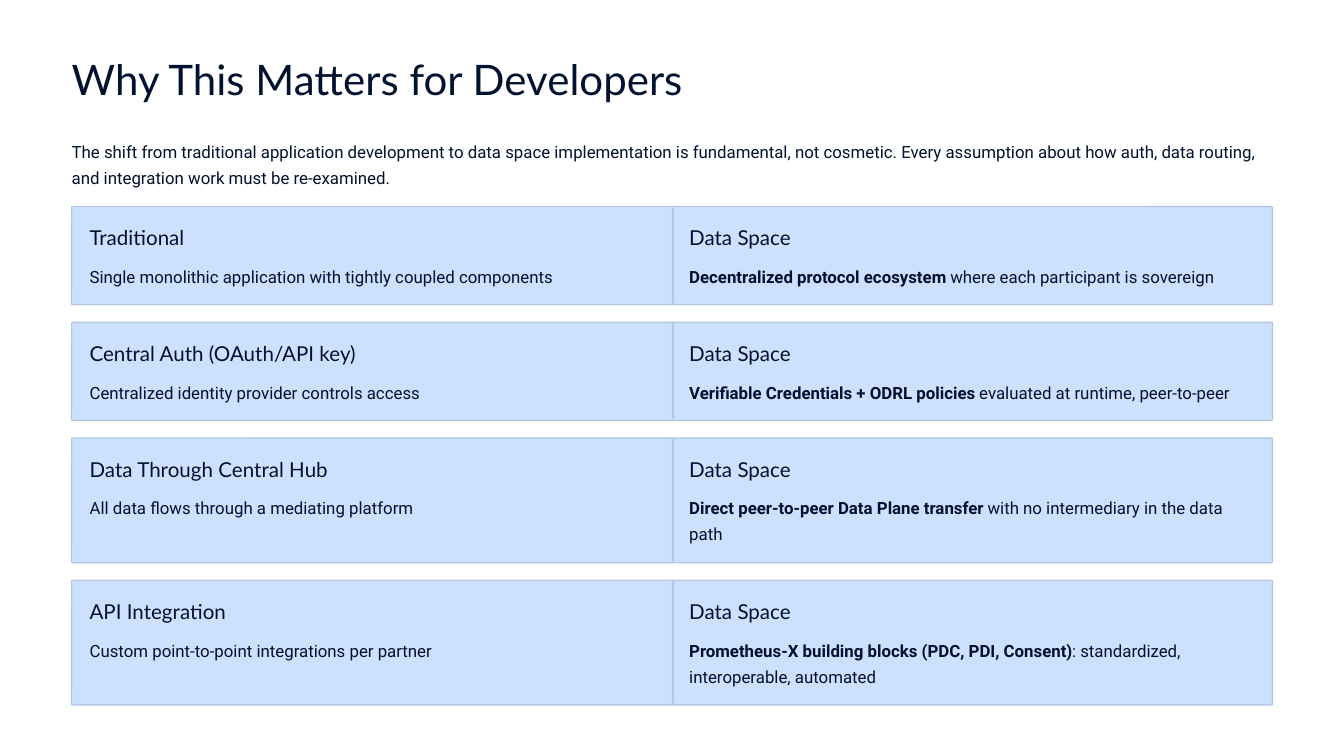
from dataclasses import dataclass

from pptx import Presentation
from pptx import util as u
from pptx.dml.color import RGBColor
from pptx.enum import shapes, text


@dataclass(frozen=True)
class Theme:
    paper: str = "FFFFFF"
    ink: str = "01122E"
    panel: str = "CDE0FE"
    edge: str = "B3C6E4"
    heading_font: str = "Lato"
    body_font: str = "Roboto"
    title_size: float = 22.5
    heading_size: float = 11
    body_size: float = 9
    heading_spacing: float = 1.04
    body_spacing: float = 1.29


THEME = Theme()
HEADING = dict(font=THEME.heading_font, size=THEME.heading_size,
               spacing=THEME.heading_spacing)
TITLE = {**HEADING, "size": THEME.title_size}
BODY = dict(font=THEME.body_font, size=THEME.body_size,
            spacing=THEME.body_spacing)


def write(box, words, *, font, size, spacing, lead=""):
    """Fill a box with one paragraph; the lead, if any, is bold."""
    frame = box.text_frame
    frame.word_wrap = True
    frame.auto_size = text.MSO_AUTO_SIZE.NONE
    frame.vertical_anchor = text.MSO_ANCHOR.TOP
    frame.margin_left = frame.margin_right = 0
    frame.margin_top = frame.margin_bottom = 0
    para = frame.paragraphs[0]
    para.alignment = text.PP_ALIGN.LEFT
    para.line_spacing = spacing
    para.space_before = u.Pt(0)
    for part, bold in ((lead, True), (words, False)):
        if part:
            span = para.add_run()
            span.text = part
            span.font.name = font
            span.font.size = u.Pt(size)
            span.font.bold = bold
            span.font.color.rgb = RGBColor.from_string(THEME.ink)


class Page:
    """The current slide and the elements drawn on it."""

    def __init__(self, deck, theme):
        self.theme = theme
        self.slide = deck.slides.add_slide(deck.slide_layouts[5])
        fill = self.slide.background.fill
        fill.solid()
        fill.fore_color.rgb = RGBColor.from_string(theme.paper)

    def title(self, words, left, top, width, height):
        box = self.slide.shapes.title
        box.left, box.top = u.Pt(left), u.Pt(top)
        box.width, box.height = u.Pt(width), u.Pt(height)
        write(box, words, **TITLE)

    def label(self, words, left, top, width, height, **style):
        box = self.slide.shapes.add_textbox(
            u.Pt(left), u.Pt(top), u.Pt(width), u.Pt(height))
        write(box, words, **style)

    def block(self, left, top, width, height, fill, line=None, radius=None):
        kind = shapes.MSO_SHAPE.RECTANGLE
        if radius is not None:
            kind = shapes.MSO_SHAPE.ROUNDED_RECTANGLE
        shape = self.slide.shapes.add_shape(
            kind, u.Pt(left), u.Pt(top), u.Pt(width), u.Pt(height))
        shape.shadow.inherit = False
        if radius is not None:
            shape.adjustments[0] = radius / min(width, height)
        shape.fill.solid()
        shape.fill.fore_color.rgb = RGBColor.from_string(fill)
        if line:
            shape.line.color.rgb = RGBColor.from_string(line)
            shape.line.width = u.Pt(0.75)
        else:
            shape.line.fill.background()

    def cell(self, left, top, heading, words, lines, lead=""):
        self.label(heading, left, top + 9.5, 158, 14, **HEADING)
        self.label(words, left, top + 29, 303, 14 * lines, lead=lead, **BODY)

    def comparison(self, top, height, old, new, lines):
        theme = self.theme
        inner = height - 2 * INSET
        # Card, its two halves and the divider
        self.block(LEFT, top, WIDTH, height, theme.panel, theme.edge, RADIUS)
        self.block(LEFT + INSET, top + INSET, HALF, inner, theme.panel,
                   radius=RADIUS)
        self.block(MIDDLE, top + INSET, HALF, inner, theme.panel)
        self.block(MIDDLE, top + INSET, 1.2, inner, theme.edge, radius=RADIUS)
        # Old way on the left, data space on the right
        self.cell(LEFT + 9.6, top, *old, lines=1)
        lead, rest = new
        self.cell(MIDDLE + 9.2, top, "Data Space", rest, lines, lead)


# Geometry in points
LEFT, WIDTH, MIDDLE = 38.4, 643.2, 360
INSET, RADIUS = 0.5, 0.48
HALF = MIDDLE - LEFT - INSET
FIRST_TOP, GAP = 110.7, 9.5
HEIGHTS = {1: 52.5, 2: 66.7}  # card height by lines of text

# Old way, data space way, lines of text
COMPARISONS = [
    (("Traditional",
      "Single monolithic application with tightly coupled components"),
     ("Decentralized protocol ecosystem",
      " where each participant is sovereign"), 1),
    (("Central Auth (OAuth/API key)",
      "Centralized identity provider controls access"),
     ("Verifiable Credentials + ODRL policies",
      " evaluated at runtime, peer-to-peer"), 1),
    (("Data Through Central Hub",
      "All data flows through a mediating platform"),
     ("Direct peer-to-peer Data Plane transfer",
      " with no intermediary in the data path"), 2),
    (("API Integration",
      "Custom point-to-point integrations per partner"),
     ("Prometheus-X building blocks (PDC, PDI, Consent)",
      ": standardized, interoperable, automated"), 2),
]


def main():
    deck = Presentation()
    deck.slide_width, deck.slide_height = u.Pt(720), u.Pt(405)
    page = Page(deck, THEME)

    # Title and introduction
    page.title("Why This Matters for Developers", LEFT, 27.4, 382, 29)
    page.label("The shift from traditional application development to data "
               "space implementation is fundamental, not cosmetic. Every "
               "assumption about how auth, data routing, and integration "
               "work must be re-examined.", LEFT, 73, WIDTH, 28, **BODY)

    # Stacked comparison cards
    top = FIRST_TOP
    for old, new, lines in COMPARISONS:
        page.comparison(top, HEIGHTS[lines], old, new, lines)
        top += HEIGHTS[lines] + GAP

    deck.save("out.pptx")


if __name__ == "__main__":
    main()
